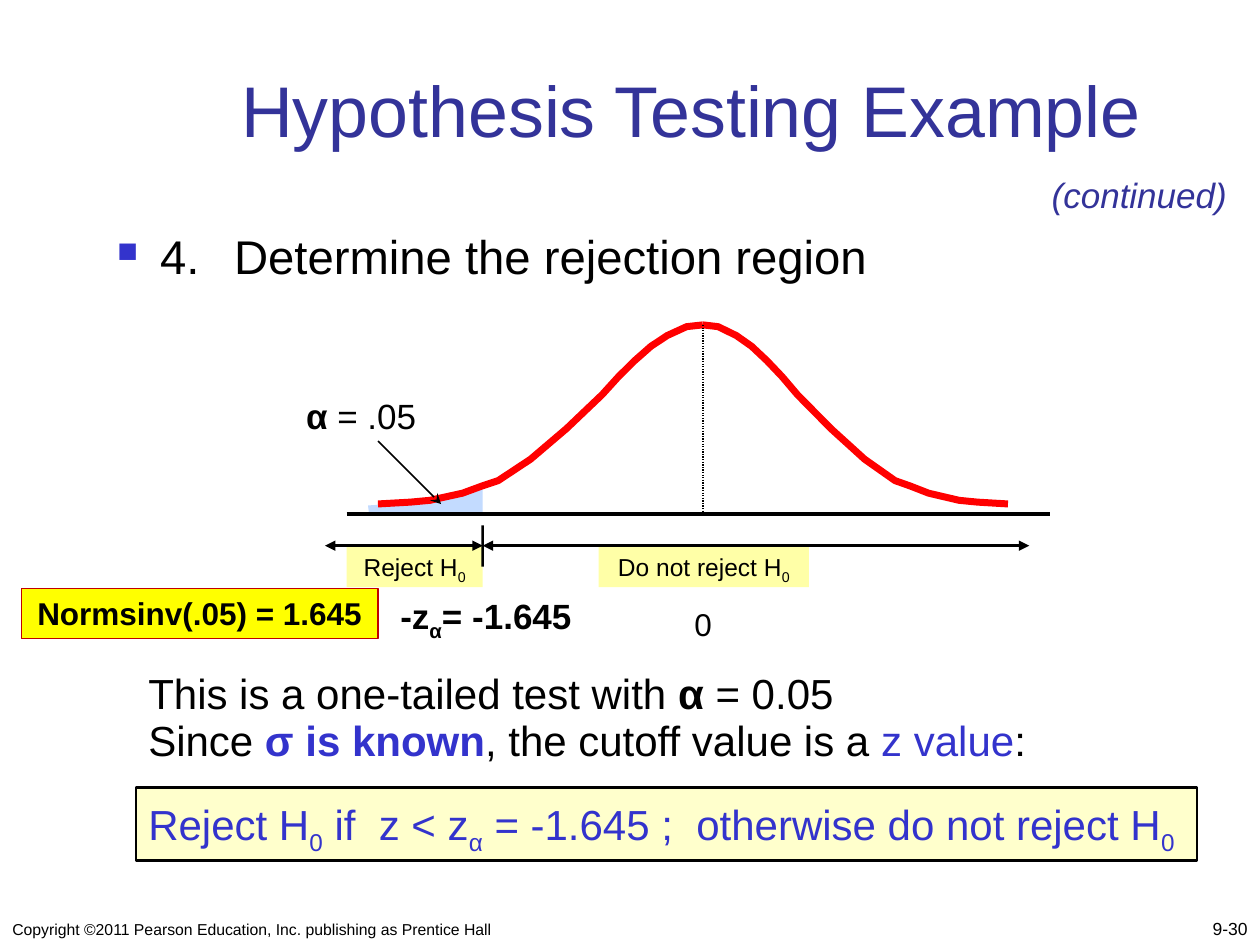
from lxml import etree
from pptx import Presentation
from pptx.dml.color import RGBColor
from pptx.enum.dml import MSO_LINE as Dash
from pptx.enum.shapes import MSO_CONNECTOR as Link, MSO_SHAPE as Preset
from pptx.enum.text import MSO_ANCHOR as Anchor, PP_ALIGN as Align
from pptx.oxml.ns import qn
from pptx.util import Cm, Pt

BLACK, BLUE, NAVY = "000000", "3333CC", "333399"
SUB = {"sub": True}
BOLD = {"bold": True}
PROFILE = [(1, 1), (.9, .99), (.84, .98), (.79, .96), (.74, .94), (.68, .9), (.63, .87), (.53, .75),
           (.42, .58), (.31, .39), (.26, .29), (.21, .2), (.16, .12), (.11, .06), (.05, .01), (0, 0)]


def color(value):
    """Turn a hex string into a colour."""
    return RGBColor.from_string(value)


def child(parent, tag, **attributes):
    """Append a drawing element to its parent."""
    return etree.SubElement(parent, qn(tag), attributes)


def style_line(line, hue, width):
    """Set colour and width of a line."""
    line.color.rgb = color(hue)
    line.width = Pt(width)


def style_shape(shape, fill=None, line=None, width=1):
    """Give a shape a plain fill and outline, or none."""
    shape.shadow.inherit = False
    if fill:
        shape.fill.solid()
        shape.fill.fore_color.rgb = color(fill)
    else:
        shape.fill.background()
    if line:
        style_line(shape.line, line, width)
    else:
        shape.line.fill.background()


def write(paragraph, runs, size, hue=BLACK, align=Align.LEFT, bold=None, italic=None):
    """Fill a paragraph with runs of (text, options)."""
    paragraph.alignment = align
    font = paragraph.font
    font.name, font.size, font.bold, font.italic = "Arial", Pt(size), bold, italic
    font.color.rgb = color(hue)
    for text, options in runs:
        run = paragraph.add_run()
        run.text = text
        if "bold" in options:
            run.font.bold = options["bold"]
        if "hue" in options:
            run.font.color.rgb = color(options["hue"])
        if "sub" in options:
            run.font._element.set("baseline", "-25000")


def add_text(slide, box, runs, size, anchor=Anchor.TOP, wrap=True, **style):
    """Add a text box with one paragraph."""
    holder = slide.shapes.add_textbox(*map(Cm, box))
    holder.text_frame.word_wrap = wrap
    holder.text_frame.vertical_anchor = anchor
    write(holder.text_frame.paragraphs[0], runs, size, **style)
    return holder


def add_panel(slide, box, fill, line=None, width=1):
    """Add a filled rectangle."""
    panel = slide.shapes.add_shape(Preset.RECTANGLE, *map(Cm, box))
    style_shape(panel, fill, line, width)
    return panel


def add_label(slide, box, fill, runs, size, line=None, width=1, bold=None):
    """Add a filled rectangle with centred text at its top."""
    label = add_panel(slide, box, fill, line, width)
    label.text_frame.word_wrap = True
    label.text_frame.vertical_anchor = Anchor.TOP
    write(label.text_frame.paragraphs[0], runs, size, align=Align.CENTER, bold=bold)
    return label


def add_line(slide, start, end, width, head=None, tail=None):
    """Add a straight black line with optional arrowheads."""
    line = slide.shapes.add_connector(Link.STRAIGHT, *map(Cm, (*start, *end)))
    style_line(line.line, BLACK, width)
    outline = line.line._get_or_add_ln()
    for tag, kind in (("a:headEnd", head), ("a:tailEnd", tail)):
        if kind:
            child(outline, tag, type=kind)
    child(line._element.spPr, "a:effectLst")
    return line


def add_outline(slide, points, closed):
    """Add a freeform through points given in centimetres."""
    start, *rest = [(Cm(x), Cm(y)) for x, y in points]
    builder = slide.shapes.build_freeform(*start)
    builder.add_line_segments(rest, close=closed)
    return builder.convert_to_shape()


def header(slide, left, top):
    """Place the title and the continuation mark."""
    add_text(slide, (left, top, 21.64, 2.11), [("Hypothesis Testing Example", {})], 41,
             anchor=Anchor.BOTTOM, hue=NAVY, align=Align.CENTER)
    add_text(slide, (left + 17.83, top + 2.31, 4.09, 1.09), [("(continued)", {})], 20,
             wrap=False, hue=NAVY, italic=True)


def step(slide, left, top):
    """Place the bulleted step heading."""
    holder = slide.shapes.add_textbox(Cm(left), Cm(top), Cm(22.43), Cm(1.9))
    holder.text_frame.word_wrap = True
    paragraph = holder.text_frame.paragraphs[0]
    layout = paragraph._p.get_or_add_pPr()
    layout.set("marL", str(Cm(.87)))
    layout.set("indent", str(-Cm(.87)))
    child(child(layout, "a:buClr"), "a:srgbClr", val=BLUE)
    child(layout, "a:buSzPct", val="60000")
    child(layout, "a:buChar", char="■")
    child(child(layout, "a:tabLst"), "a:tab", pos=str(Cm(2.36)), algn="l")
    write(paragraph, [("4. \tDetermine the rejection region", {})], 27)


def bell_curve(slide, left, top):
    """Draw the bell curve with its shaded left tail."""
    center, axis, cutoff, height = left + 8.25, top + 3.81, left + 3.81, 3.61
    edge = [(1.5, 3.64), (2.51, 3.58), (3.17, 3.41), (3.5, 3.36), (3.81, 3.18)]
    tail = [(left + x, top + y) for x, y in edge]
    region = add_outline(slide, [(left + 1.52, axis), *tail, (cutoff, axis)], True)
    style_shape(region, "C3DBFF")
    for span in (-6.55, 6.15):
        half = add_outline(slide, [(center + span * x, top + height * y) for x, y in PROFILE], False)
        style_shape(half, None, "FF0000", 4)
    add_line(slide, (left + 1.07, axis), (left + 15.24, axis), 2)
    add_line(slide, (left + 1.7, top + 2.34), (left + 2.97, top + height), 1, tail="stealth")
    add_text(slide, (left, top + 1.27, 3.61, 1.09), [("α ", BOLD), ("= .05", {})], 20)
    mean = add_line(slide, (center, top), (center, axis), .75)
    mean.line.dash_style = Dash.ROUND_DOT


def decision_scale(slide, left, top):
    """Place the regions below the axis with their cutoff values."""
    cutoff, level = left + 9.3, top + .41
    reject = add_label(slide, (left + 6.56, level, 2.74, .84), "FFFFA7",
                       [("Reject H", {}), ("0", SUB)], 14)
    add_label(slide, (left + 11.64, level, 4.24, .84), "FFFFA7",
              [("Do not reject H", {}), ("0", SUB)], 14)
    tick = add_line(slide, (cutoff, top), (cutoff, level + .42), 1.5)
    tick.end_connect(reject, 3)
    for start, end in ((cutoff, left + 20.32), (left + 6.12, cutoff)):
        add_line(slide, (start, level), (end, level), 1.5, head="triangle", tail="triangle")
    add_text(slide, (left + 7.39, top + 1.27, 4.01, 1.09),
             [("-z", {}), ("α", SUB), ("= -1.645", {})], 20, bold=True)
    add_text(slide, (left + 13.11, top + 1.48, 1.27, 1.02), [("0", {})], 18, align=Align.CENTER)
    add_label(slide, (left, top + 1.27, 7.19, 1.02), "FFFF00",
              [("Normsinv(.05) = 1.645", {})], 18, "C00000", .75, bold=True)


def conclusion(slide, left, top):
    """Place the explanation and the framed decision rule."""
    add_panel(slide, (left, top + 2.54, 21.39, 1.47), "FFFFCC", BLACK, 1.5)
    holder = add_text(slide, (left, top, 21.39, 3.96),
                      [("This is a one-tailed test with ", {}), ("α", BOLD), (" = 0.05", {})], 24)
    reason = holder.text_frame.add_paragraph()
    reason.line_spacing = .95
    write(reason, [("Since ", {}), ("σ is known", {"bold": True, "hue": BLUE}),
                   (", the cutoff value is a ", {}), ("z value", {"hue": BLUE}), (":", {})], 24)
    rule = holder.text_frame.add_paragraph()
    rule.line_spacing, rule.space_before = 1.2, Pt(12)
    write(rule, [("Reject H", {}), ("0", SUB), (" if  z < z", {}), ("α", SUB),
                 (" = -1.645 ;  otherwise do not reject H", {}), ("0", SUB)], 24, hue=BLUE)


def footer(slide, top):
    """Place the copyright line and the page number."""
    add_text(slide, (0, top, 12.9, .85),
             [("Copyright ©2011 Pearson Education, Inc. publishing as Prentice Hall", {})], 9,
             anchor=Anchor.BOTTOM)
    add_text(slide, (20.12, top, 5.28, .85), [("9-30", {})], 10,
             anchor=Anchor.BOTTOM, align=Align.RIGHT)


def main():
    """Build and save the slide."""
    deck = Presentation()
    deck.slide_width, deck.slide_height = Cm(25.4), Cm(19.05)
    slide = deck.slides.add_slide(deck.slide_layouts[6])
    header(slide, 3.12, 1.07)
    step(slide, 2.11, 4.45)
    bell_curve(slide, 5.92, 6.55)
    decision_scale(slide, .43, 10.59)
    conclusion(slide, 2.74, 13.34)
    footer(slide, 18.2)
    deck.save("out.pptx")


if __name__ == "__main__":
    main()
